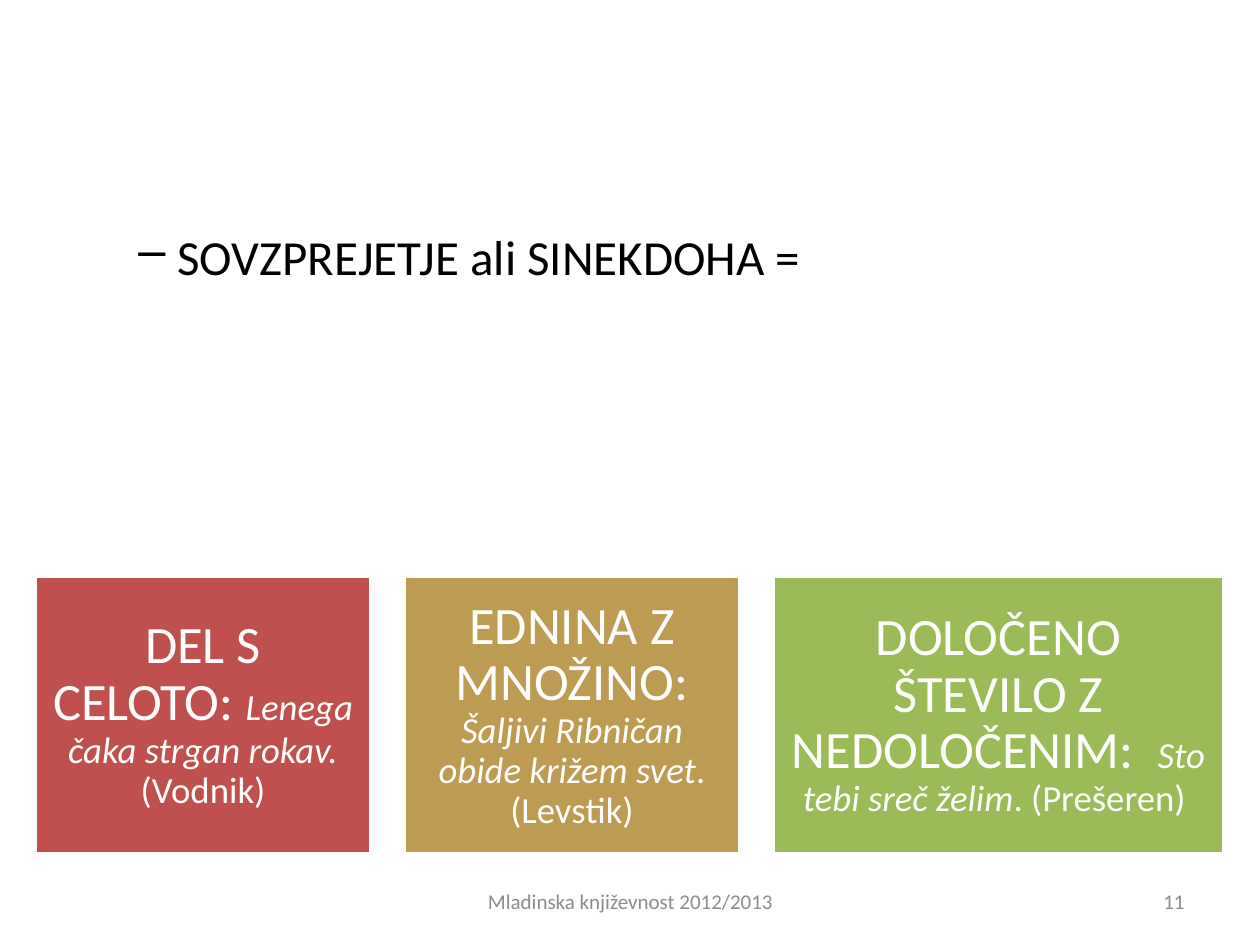
from lxml import etree
from pptx import Presentation
from pptx.dml.color import RGBColor
from pptx.enum.shapes import MSO_SHAPE
from pptx.enum.text import MSO_ANCHOR, PP_ALIGN
from pptx.oxml.ns import qn
from pptx.util import Pt

PX = 7257  # EMU per px at 126 px to the inch
FONT = "Calibri"
BLACK = RGBColor(0x00, 0x00, 0x00)
WHITE = RGBColor(0xFF, 0xFF, 0xFF)
GRAY = RGBColor(0x8C, 0x8C, 0x8C)
RED = RGBColor(0xC0, 0x50, 0x4D)
TAN = RGBColor(0xBD, 0x9B, 0x53)
GREEN = RGBColor(0x9B, 0xBB, 0x59)

CARD_LEFT, CARD_TOP, CARD_HEIGHT, CARD_GAP, CARD_INSET = 35, 576, 278, 33, 15
# width, fill, heading, example, author
CARDS = [
    (336, RED, "DEL S CELOTO: ", "Lenega čaka strgan rokav. ", "(Vodnik)"),
    (336, TAN, "EDNINA Z MNOŽINO: ", "Šaljivi Ribničan obide križem svet",
     ". (Levstik)"),
    (451, GREEN, "DOLOČENO ŠTEVILO Z NEDOLOČENIM:  ", "Sto tebi sreč želim",
     ". (Prešeren) "),
]


def px(n):
    return n * PX


def set_font(font, size, color):
    font.name = FONT
    font.size = Pt(size)
    font.color.rgb = color


def add_text(slide, box, text, size, color, align=PP_ALIGN.LEFT,
             anchor=MSO_ANCHOR.TOP):
    tf = slide.shapes.add_textbox(*map(px, box)).text_frame
    tf.word_wrap = True
    tf.vertical_anchor = anchor
    p = tf.paragraphs[0]
    p.text = text
    p.alignment = align
    set_font(p.font, size, color)
    return p


def add_dash(p, margin, indent):
    pPr = p._p.get_or_add_pPr()
    pPr.set("marL", str(px(margin)))
    pPr.set("indent", str(px(indent)))
    bullet = etree.Element(qn("a:buChar"), char="–")
    pPr.insert(0, bullet)


def add_card(slide, left, width, fill, heading, example, author):
    sp = slide.shapes.add_shape(MSO_SHAPE.RECTANGLE, px(left), px(CARD_TOP),
                                px(width), px(CARD_HEIGHT))
    sp.shadow.inherit = False
    sp.fill.solid()
    sp.fill.fore_color.rgb = fill
    sp.line.color.rgb = WHITE
    sp.line.width = Pt(2)

    tf = sp.text_frame
    tf.word_wrap = True
    tf.vertical_anchor = MSO_ANCHOR.MIDDLE
    tf.margin_left = tf.margin_right = px(CARD_INSET)
    tf.margin_top = tf.margin_bottom = px(CARD_INSET)
    p = tf.paragraphs[0]
    p.alignment = PP_ALIGN.CENTER
    p.line_spacing = 0.9
    for text, size, italic in ((heading, 30, False), (example, 21, True),
                               (author, 21, False)):
        r = p.add_run()
        r.text = text
        set_font(r.font, size, WHITE)
        r.font.italic = italic


def main():
    prs = Presentation()
    prs.slide_width, prs.slide_height = px(1260), px(945)
    slide = prs.slides.add_slide(prs.slide_layouts[6])

    # Term being explained
    term = add_text(slide, (63, 220, 1134, 350),
                    "SOVZPREJETJE ali SINEKDOHA =", 28, BLACK)
    add_dash(term, 102, -39)

    # Footer and slide number
    add_text(slide, (431, 876, 399, 50), "Mladinska književnost 2012/2013",
             12, GRAY, PP_ALIGN.CENTER, MSO_ANCHOR.MIDDLE)
    add_text(slide, (903, 876, 294, 50), "11",
             12, GRAY, PP_ALIGN.RIGHT, MSO_ANCHOR.MIDDLE)

    # Three kinds of exchange
    left = CARD_LEFT
    for width, *content in CARDS:
        add_card(slide, left, width, *content)
        left += width + CARD_GAP

    prs.save("out.pptx")


if __name__ == "__main__":
    main()
